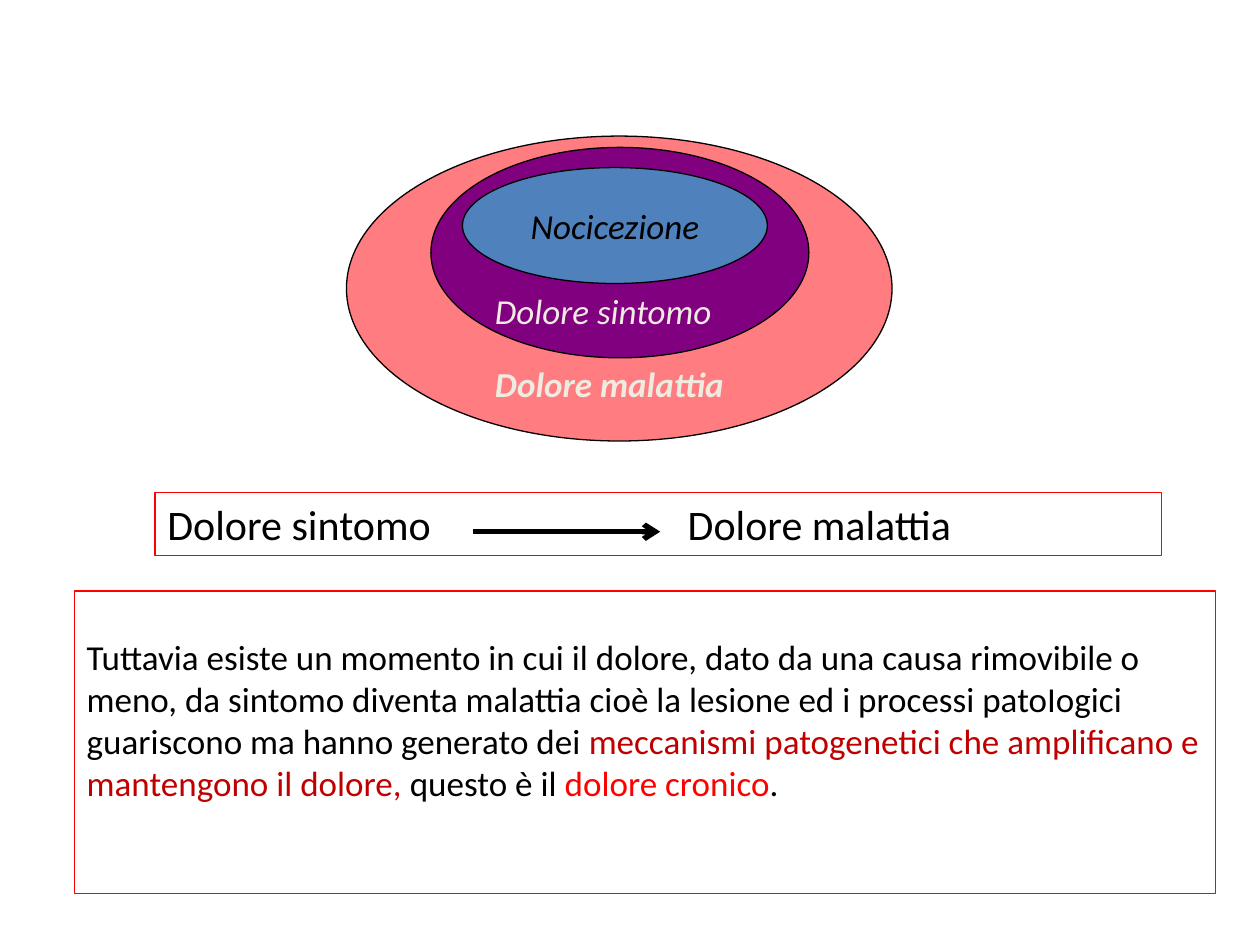
from dataclasses import dataclass

from lxml.etree import SubElement
from pptx import Presentation
from pptx.dml.color import RGBColor
from pptx.enum.shapes import MSO_CONNECTOR as Connector, MSO_SHAPE as Shape
from pptx.enum.text import MSO_ANCHOR as Anchor, PP_ALIGN as Align
from pptx.oxml.ns import qn
from pptx.util import Inches, Pt

BLACK, CREAM, RED, DARK_RED = "000000", "EEECE1", "FF0000", "C00000"


@dataclass
class Span:
    text: str
    color: str = BLACK
    size: int = 20
    bold: bool = False
    italic: bool = False


@dataclass
class Oval:
    left: float
    top: float
    width: float
    height: float
    fill: str


@dataclass
class TextBox:
    left: float
    top: float
    width: float
    height: float
    spans: list[Span]
    line: str | None = None
    inset_top: float = 0.05
    wrap: bool = True


def rgb(color: str) -> RGBColor:
    return RGBColor.from_string(color)


def place(item: Oval | TextBox) -> list[int]:
    return [Inches(n) for n in (item.left, item.top, item.width, item.height)]


def set_line(shape, color: str, width: float) -> None:
    shape.line.color.rgb = rgb(color)
    shape.line.width = Pt(width)


def write(para, spans: list[Span]) -> None:
    for span in spans:
        run = para.add_run()
        run.text = span.text
        style = {"name": "Calibri", "size": Pt(span.size),
                 "bold": span.bold, "italic": span.italic}
        for name, value in style.items():
            setattr(run.font, name, value)
        run.font.color.rgb = rgb(span.color)


def add_oval(page, oval: Oval):
    shape = page.shapes.add_shape(Shape.OVAL, *place(oval))
    shape.shadow.inherit = False
    shape.fill.solid()
    shape.fill.fore_color.rgb = rgb(oval.fill)
    set_line(shape, BLACK, 0.75)
    return shape


def add_text(page, box: TextBox):
    shape = page.shapes.add_textbox(*place(box))
    shape.text_frame.word_wrap = box.wrap
    shape.text_frame.margin_top = Inches(box.inset_top)
    if box.line:
        set_line(shape, box.line, 0.75)
    para = shape.text_frame.paragraphs[0]
    write(para, box.spans)
    return para


def add_tab_stop(para, position: float) -> None:
    stops = SubElement(para._p.get_or_add_pPr(), qn("a:tabLst"))
    SubElement(stops, qn("a:tab"), pos=str(Inches(position)), algn="l")


def add_arrow(page, start: tuple[float, float], end: tuple[float, float]) -> None:
    ends = [Inches(n) for n in (*start, *end)]
    arrow = page.shapes.add_connector(Connector.STRAIGHT, *ends)
    set_line(arrow, BLACK, 3)
    SubElement(arrow.line._get_or_add_ln(), qn("a:tailEnd"), type="arrow")
    SubElement(arrow._element.spPr, qn("a:effectLst"))


OVALS = [
    Oval(2.75, 1.08, 4.33, 2.42, "FF7C80"),
    Oval(3.42, 1.17, 3, 1.67, "800080"),
    Oval(3.67, 1.33, 2.42, 0.92, "4F81BD"),
]
LABELS = [
    TextBox(3.83, 2.25, 2.14, 0.44,
            [Span("Dolore sintomo", CREAM, italic=True)]),
    TextBox(3.83, 2.83, 2.65, 0.44,
            [Span("Dolore malattia", CREAM, bold=True, italic=True)]),
]
TRANSITION = TextBox(1.23, 3.91, 7.99, 0.5,
                     [Span("Dolore sintomo\tDolore malattia", size=24)], RED)
EXPLANATION = TextBox(0.59, 4.69, 9.06, 2.4, [
    Span("Tuttavia esiste un momento in cui il dolore, dato da una causa "
         "rimovibile o meno, da sintomo diventa malattia cioè la lesione ed i "
         "processi patoIogici guariscono ma hanno generato dei "),
    Span("meccanismi patogenetici che amplificano e mantengono il dolore,",
         DARK_RED),
    Span(" questo è il "),
    Span("dolore cronico", RED),
    Span("."),
], RED, inset_top=0.35)


def main() -> None:
    deck = Presentation()
    deck.slide_width, deck.slide_height = Inches(10), Inches(7.5)
    page = deck.slides.add_slide(deck.slide_layouts[6])

    # Nested ovals, the innermost with its own text
    core = [add_oval(page, oval) for oval in OVALS][-1]
    core.text_frame.word_wrap = False
    core.text_frame.vertical_anchor = Anchor.MIDDLE
    para = core.text_frame.paragraphs[0]
    para.alignment = Align.CENTER
    write(para, [Span("Nocicezione", italic=True)])
    for label in LABELS:
        add_text(page, label)

    # From symptom to disease
    add_tab_stop(add_text(page, TRANSITION), 4.13)
    add_arrow(page, (3.75, 4.22), (5.24, 4.22))

    # Explanation
    add_text(page, EXPLANATION)

    deck.save("out.pptx")


if __name__ == "__main__":
    main()
